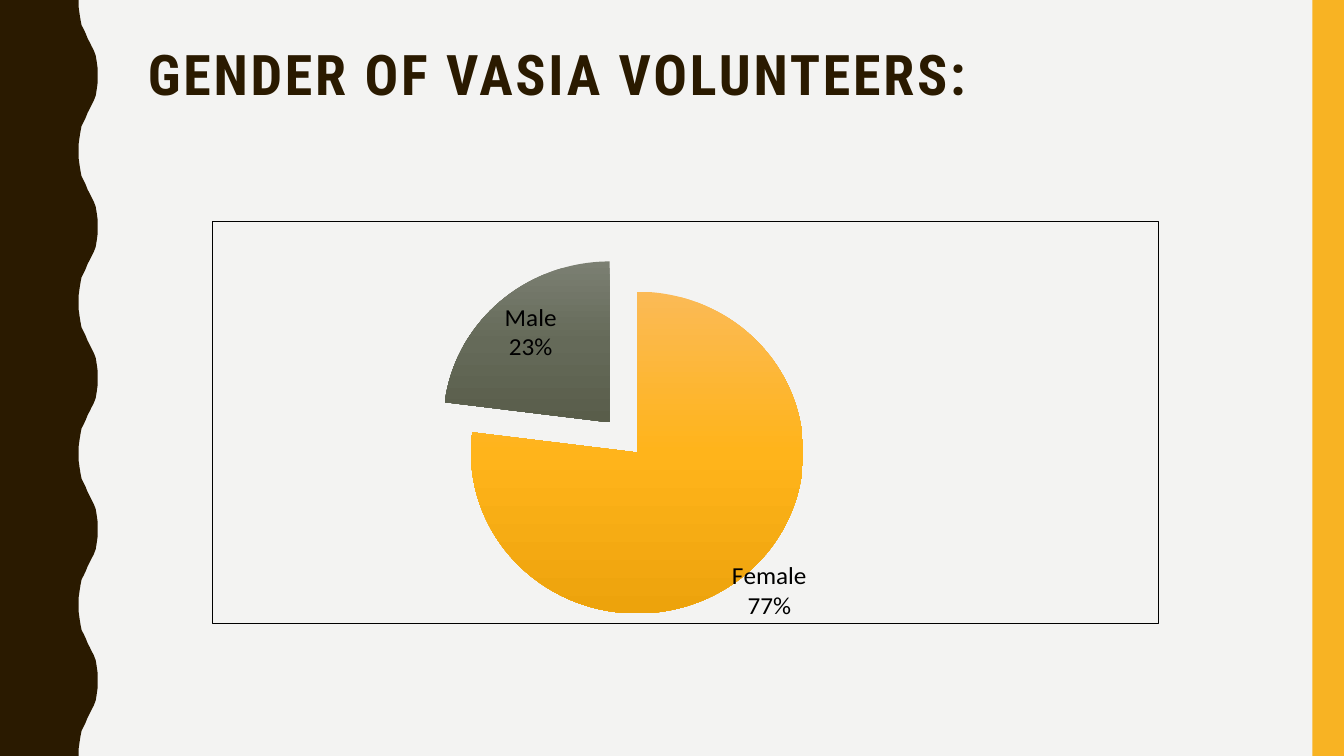
from dataclasses import dataclass

from lxml import etree
from pptx import Presentation
from pptx import util as u
from pptx.chart.data import CategoryChartData
from pptx.dml.color import RGBColor
from pptx.enum import chart as charts, shapes, text
from pptx.oxml import parse_xml
from pptx.oxml.ns import nsdecls, qn

COLORS = {"page": "F3F3F2", "brown": "2A1A00", "gold": "F8B323", "black": "000000"}
PAGE_WIDTH, PAGE_HEIGHT = 960, 540


@dataclass
class Slice:
    name: str
    value: int
    explosion: int
    label_shift: tuple[float, float]  # fractions of the chart's size
    shades: tuple[str, str, str]  # top, middle, bottom


SLICES = [
    Slice("Female", 77, 25, (-0.02, -0.04), ("FBBA56", "FFB41B", "EDA30C")),
    Slice("Male", 23, 0, (0, 0), ("7B7F72", "656A59", "595D4A")),
]

# Half a period of the wavy edge: (x, y); the other half mirrors it
HALF_WAVE = [
    (56.2, 0), (56.2, 5), (56.9, 10), (57.6, 14.4), (58.3, 18),
    (59.8, 20.9), (61.2, 23.8), (62.6, 27.4), (64.1, 30.2), (65.5, 33.1),
    (67, 36), (68.4, 39.6), (69.1, 43.9), (69.8, 49), (69.8, 54),
]
PERIOD = 108
FINE = 100  # drawing units per point


def rgb(name: str) -> RGBColor:
    return RGBColor.from_string(COLORS[name])


def paint(shape, color: str) -> None:
    shape.shadow.inherit = False
    shape.fill.solid()
    shape.fill.fore_color.rgb = rgb(color)
    shape.line.fill.background()


def add_wave(page) -> None:
    wave = HALF_WAVE + [(x, PERIOD - y) for x, y in reversed(HALF_WAVE[1:-1])]
    edge = [(x, y + start) for start in range(0, PAGE_HEIGHT, PERIOD) for x, y in wave]
    edge += [(HALF_WAVE[0][0], PAGE_HEIGHT), (0, PAGE_HEIGHT)]
    builder = page.shapes.build_freeform(0, 0, scale=u.Pt(1) / FINE)
    builder.add_line_segments([(x * FINE, y * FINE) for x, y in edge], close=True)
    paint(builder.convert_to_shape(), "brown")


def add_text(page, wording: str, *, left: float, top: float, width: float, height: float,
             size: float, font: str, color: str, bold: bool = False,
             line_spacing: float = 1, letter_spacing: float = 0) -> None:
    box = page.shapes.add_textbox(u.Pt(left), u.Pt(top), u.Pt(width), u.Pt(height))
    frame = box.text_frame
    frame.word_wrap = True
    frame.vertical_anchor = text.MSO_ANCHOR.TOP
    para = frame.paragraphs[0]
    para.line_spacing = line_spacing
    span = para.add_run()
    span.text = wording
    span.font.size, span.font.name, span.font.bold = u.Pt(size), font, bold
    span.font.color.rgb = rgb(color)
    span.font._element.set("spc", str(int(letter_spacing * 100)))


def shade_slice(point, item: Slice) -> None:
    fill = point.format.fill
    fill.gradient()
    fill.gradient_angle = 270
    stops = fill._xPr.find(qn("a:gradFill")).find(qn("a:gsLst"))
    for stop in list(stops):
        stops.remove(stop)
    for index, shade in enumerate(item.shades):
        stop = etree.SubElement(stops, qn("a:gs"), pos=str(index * 50000))
        etree.SubElement(stop, qn("a:srgbClr"), val=shade)
    point.format.line.fill.background()


def explosion_xml(percent: int):
    return parse_xml(f'<c:explosion {nsdecls("c")} val="{percent}"/>')


def layout_xml(**settings):
    place = "".join(f'<c:{key} val="{value}"/>' for key, value in settings.items())
    return parse_xml(
        f'<c:layout {nsdecls("c")}><c:manualLayout>{place}</c:manualLayout></c:layout>')


def label_xml(index: int):
    shows = "".join(f'<c:show{key} val="{value}"/>' for key, value in (
        ("LegendKey", 0), ("Val", 0), ("CatName", 1), ("SerName", 0), ("Percent", 1),
        ("BubbleSize", 0)))
    return parse_xml(
        f'<c:dLbl {nsdecls("c")}><c:idx val="{index}"/><c:dLblPos val="bestFit"/>{shows}'
        f'<c:separator>\n</c:separator></c:dLbl>')


def add_pie(page) -> None:
    data = CategoryChartData()
    data.categories = [item.name for item in SLICES]
    data.add_series("Series 1", [item.value for item in SLICES])
    chart = page.shapes.add_chart(
        charts.XL_CHART_TYPE.PIE, u.Pt(151.2), u.Pt(157.7), u.Pt(676.8), u.Pt(297), data).chart
    chart.has_title = chart.has_legend = False
    chart.font.size, chart.font.name = u.Pt(18), "Calibri"
    chart.font.color.rgb = rgb("black")

    # Labels
    series = chart.plots[0].series[0]
    labels = series.data_labels
    labels.show_value = False
    labels.show_category_name = labels.show_percentage = True
    labels.number_format, labels.number_format_is_linked = "0%", False
    labels.position = charts.XL_LABEL_POSITION.BEST_FIT
    separator = parse_xml(f'<c:separator {nsdecls("c")}>\n</c:separator>')
    labels._element.find(qn("c:showBubbleSize")).addnext(separator)

    # Slices
    for index, item in enumerate(SLICES):
        point = series.points[index]
        shade_slice(point, item)
        marker = point.format.fill._xPr.getparent()
        marker.find(qn("c:spPr")).addprevious(explosion_xml(item.explosion))
        if any(item.label_shift):
            label = label_xml(index)
            x, y = item.label_shift
            label.insert(1, layout_xml(x=x, y=y))
            labels._element.insert(0, label)
    series._element.find(qn("c:dPt")).addprevious(
        explosion_xml(max(item.explosion for item in SLICES)))

    # Plot placement and frame
    plot_area = chart._chartSpace.chart.plotArea
    for layout in plot_area.findall(qn("c:layout")):
        plot_area.remove(layout)
    plot_area.insert(0, layout_xml(
        layoutTarget="inner", xMode="edge", yMode="edge", x=0.16, y=0, w=0.52, h=1))
    chart._chartSpace.find(qn("c:txPr")).addprevious(parse_xml(
        f'<c:spPr {nsdecls("c", "a")}><a:noFill/><a:ln w="{u.Pt(0.75)}"><a:solidFill>'
        f'<a:srgbClr val="{COLORS["black"]}"/></a:solidFill></a:ln></c:spPr>'))


def main() -> None:
    deck = Presentation()
    deck.slide_width, deck.slide_height = u.Pt(PAGE_WIDTH), u.Pt(PAGE_HEIGHT)
    page = deck.slides.add_slide(deck.slide_layouts[6])
    page.background.fill.solid()
    page.background.fill.fore_color.rgb = rgb("page")

    # Side bands
    add_wave(page)
    band = page.shapes.add_shape(
        shapes.MSO_SHAPE.RECTANGLE, u.Pt(937.5), 0, u.Pt(22.5), u.Pt(PAGE_HEIGHT))
    paint(band, "gold")

    # Title and chart
    add_text(page, "GENDER OF VASIA VOLUNTEERS:", left=98.6, top=30.2, width=801.4,
             height=117.4, size=40, font="Roboto Condensed", color="brown", bold=True,
             line_spacing=0.9, letter_spacing=2)
    add_pie(page)
    deck.save("out.pptx")


if __name__ == "__main__":
    main()
